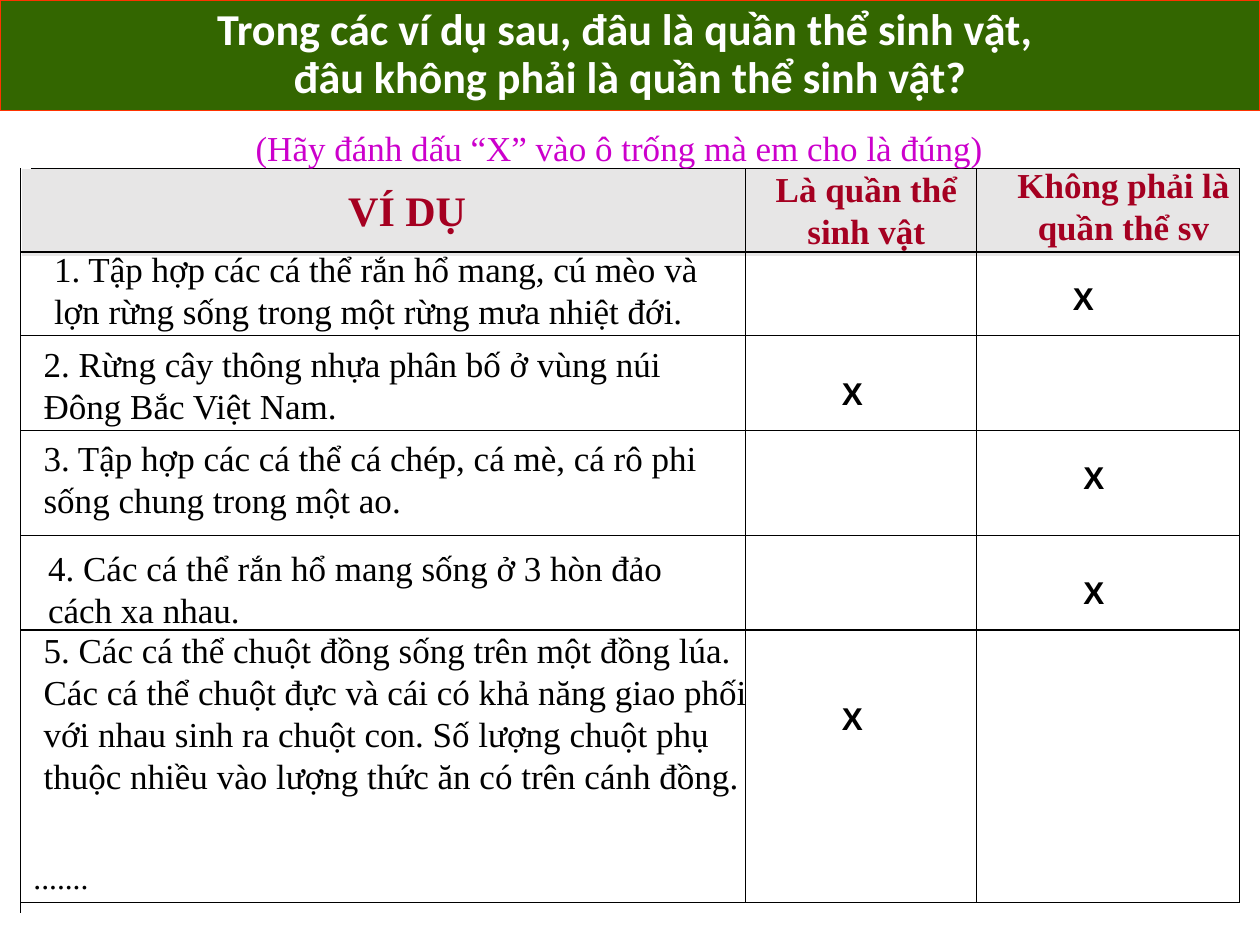
from dataclasses import dataclass

from lxml.etree import SubElement
from pptx import Presentation
from pptx.dml.color import RGBColor
from pptx.enum.shapes import MSO_CONNECTOR
from pptx.enum.text import MSO_ANCHOR, MSO_AUTO_SIZE, PP_ALIGN
from pptx.oxml.ns import qn
from pptx.util import Cm, Pt


@dataclass(frozen=True)
class Theme:
    """Colours, fonts and type sizes of the slide."""
    banner: str = "336600"
    banner_line: str = "FF3300"
    white: str = "FFFFFF"
    black: str = "000000"
    header_fill: str = "E7E6E6"
    header_text: str = "A50021"
    hint: str = "CC00CC"
    title_font: str = "Calibri"
    body_font: str = "Times New Roman"
    mark_font: str = "Arial"
    title_size: float = 25.2
    heading_size: int = 24
    body_size: int = 20
    mark_size: int = 18


THEME = Theme()
COLUMN_WIDTHS = (14.61, 4.65, 5.31)
ROW_HEIGHTS = (1.78, 1.65, 1.78, 2.41, 1.65, 3.18, 2.54)
RULES_X = ((0, 0.75), (14.61, 0.25), (19.27, 0.75), (24.56, 0.75))
RULES_Y = ((0, 0.75), (1.69, 0.75), (3.38, 0.5), (5.29, 0.75),
           (7.41, 0.75), (9.31, 0.75), (14.81, 0.75))
HEADINGS = (
    ("VÍ DỤ", (6.35, 0.21, 4.45, 1.27), THEME.heading_size, PP_ALIGN.LEFT),
    ("Là quần thể sinh vật", (14.82, -0.14, 4.45, 1.96), THEME.body_size, PP_ALIGN.CENTER),
    ("Không phải là quần thể sv", (19.48, -0.21, 5.5, 1.96), THEME.body_size, PP_ALIGN.CENTER),
)
EXAMPLES = (
    ("1. Tập hợp các cá thể rắn hổ mang, cú mèo và lợn rừng sống trong một rừng mưa nhiệt đới.",
     (0.42, 1.48, 13.97, 1.96), (20.96, 2.11)),
    ("2. Rừng cây thông nhựa phân bố ở vùng núi Đông Bắc Việt Nam.",
     (0.21, 3.38, 14.17, 1.96), (16.3, 4.02)),
    ("3. Tập hợp các cá thể cá chép, cá mè, cá rô phi sống chung trong một ao.",
     (0.21, 5.29, 14.17, 1.96), (21.17, 5.71)),
    ("4. Các cá thể rắn hổ mang sống ở 3 hòn đảo cách xa nhau.",
     (0.3, 7.51, 13.97, 1.96), (21.17, 8.04)),
    ("5. Các cá thể chuột đồng sống trên một đồng lúa. Các cá thể chuột đực và cái có khả năng "
     "giao phối với nhau sinh ra chuột con. Số lượng chuột phụ thuộc nhiều vào lượng thức ăn "
     "có trên cánh đồng.",
     (0.21, 9.16, 14.8, 3.63), (16.3, 10.58)),
)


def rgb(value):
    """Return the colour for a hex string."""
    return RGBColor.from_string(value)


def write(tf, text, *, size=THEME.body_size, font=THEME.body_font, color=THEME.black,
          bold=False, align=PP_ALIGN.LEFT, spacing=None):
    """Write formatted text into a frame, with a line break at each newline."""
    p = tf.paragraphs[0]
    p.alignment = align
    p.line_spacing = spacing
    for i, line in enumerate(text.split("\n")):
        if i:
            p.add_line_break()
        r = p.add_run()
        r.text = line
        r.font.size = Pt(size)
        r.font.name = font
        r.font.bold = bold
        r.font.color.rgb = rgb(color)


def add_text(s, box, text, **fmt):
    """Add a wrapping text box that grows with its text."""
    tf = s.shapes.add_textbox(*map(Cm, box)).text_frame
    tf.word_wrap = True
    tf.auto_size = MSO_AUTO_SIZE.SHAPE_TO_FIT_TEXT
    write(tf, text, **fmt)
    return tf


def add_rule(s, x1, y1, x2, y2, width):
    """Add a plain black line."""
    line = s.shapes.add_connector(MSO_CONNECTOR.STRAIGHT, *map(Cm, (x1, y1, x2, y2)))
    line.line.color.rgb = rgb(THEME.black)
    line.line.width = Pt(width)
    SubElement(line._element.spPr, qn("a:effectLst"))


def add_banner(s, box):
    """Place and format the title placeholder."""
    sp = s.shapes.title
    sp.left, sp.top, sp.width, sp.height = map(Cm, box)
    sp.fill.solid()
    sp.fill.fore_color.rgb = rgb(THEME.banner)
    sp.line.color.rgb = rgb(THEME.banner_line)
    sp.line.width = Pt(0.75)
    tf = sp.text_frame
    tf.auto_size = MSO_AUTO_SIZE.NONE
    tf.vertical_anchor = MSO_ANCHOR.MIDDLE
    write(tf, "Trong các ví dụ sau, đâu là quần thể sinh vật, \nđâu không phải là quần thể sinh vật?",
          size=THEME.title_size, font=THEME.title_font, color=THEME.white, bold=True,
          align=PP_ALIGN.CENTER, spacing=0.9)


def add_grid(s, box):
    """Add the table with its shaded header row."""
    table = s.shapes.add_table(len(ROW_HEIGHTS), len(COLUMN_WIDTHS), *map(Cm, box)).table
    table.horz_banding = False
    for column, width in zip(table.columns, COLUMN_WIDTHS):
        column.width = Cm(width)
    for i, (row, height) in enumerate(zip(table.rows, ROW_HEIGHTS)):
        row.height = Cm(height)
        for cell in row.cells:
            cell.fill.solid()
            cell.fill.fore_color.rgb = rgb(THEME.white if i else THEME.header_fill)
    last = table.cell(len(ROW_HEIGHTS) - 1, 0)
    last.margin_top = Cm(1.52)
    write(last.text_frame, ".......", size=THEME.mark_size)


def add_rules(s, box):
    """Rule the rows and columns of the grid."""
    left, top = box[:2]
    right, bottom = RULES_X[-1][0], RULES_Y[-1][0]
    for x, width in RULES_X:
        overrun = 0 if x else 0.21
        add_rule(s, left + x, top, left + x, top + bottom + overrun, width)
    for y, width in RULES_Y:
        indent = 0 if y else 0.21
        add_rule(s, left + indent, top + y, left + right, top + y, width)


def add_exercise(s, box):
    """Place the grid, the examples, their marks and the headings."""
    left, top = box[:2]
    add_grid(s, box)
    for text, (x, y, w, h), (mark_x, mark_y) in EXAMPLES:
        add_text(s, (left + x, top + y, w, h), text)
        add_text(s, (left + mark_x, top + mark_y, 1.69, 1.02), "X",
                 size=THEME.mark_size, font=THEME.mark_font, bold=True)
    add_rules(s, box)
    for text, (x, y, w, h), size, align in HEADINGS:
        add_text(s, (left + x, top + y, w, h), text, size=size,
                 color=THEME.header_text, bold=True, align=align)


def add_hint(s, box):
    """Place the instruction under the banner."""
    tf = add_text(s, box, "(Hãy đánh dấu “X” vào ô trống mà em cho là đúng)",
                  color=THEME.hint, align=PP_ALIGN.CENTER)
    tf.word_wrap = False
    tf.auto_size = MSO_AUTO_SIZE.NONE
    tf.vertical_anchor = MSO_ANCHOR.MIDDLE


def main():
    """Build the slide and save it."""
    prs = Presentation()
    prs.slide_width, prs.slide_height = Cm(25.4), Cm(19.05)
    s = prs.slides.add_slide(prs.slide_layouts[5])
    add_banner(s, (0, 0, 25.4, 2.23))
    add_exercise(s, (0.42, 3.39, 24.57, 14.99))
    add_hint(s, (1.69, 2.33, 21.59, 1.27))
    prs.save("out.pptx")


if __name__ == "__main__":
    main()
